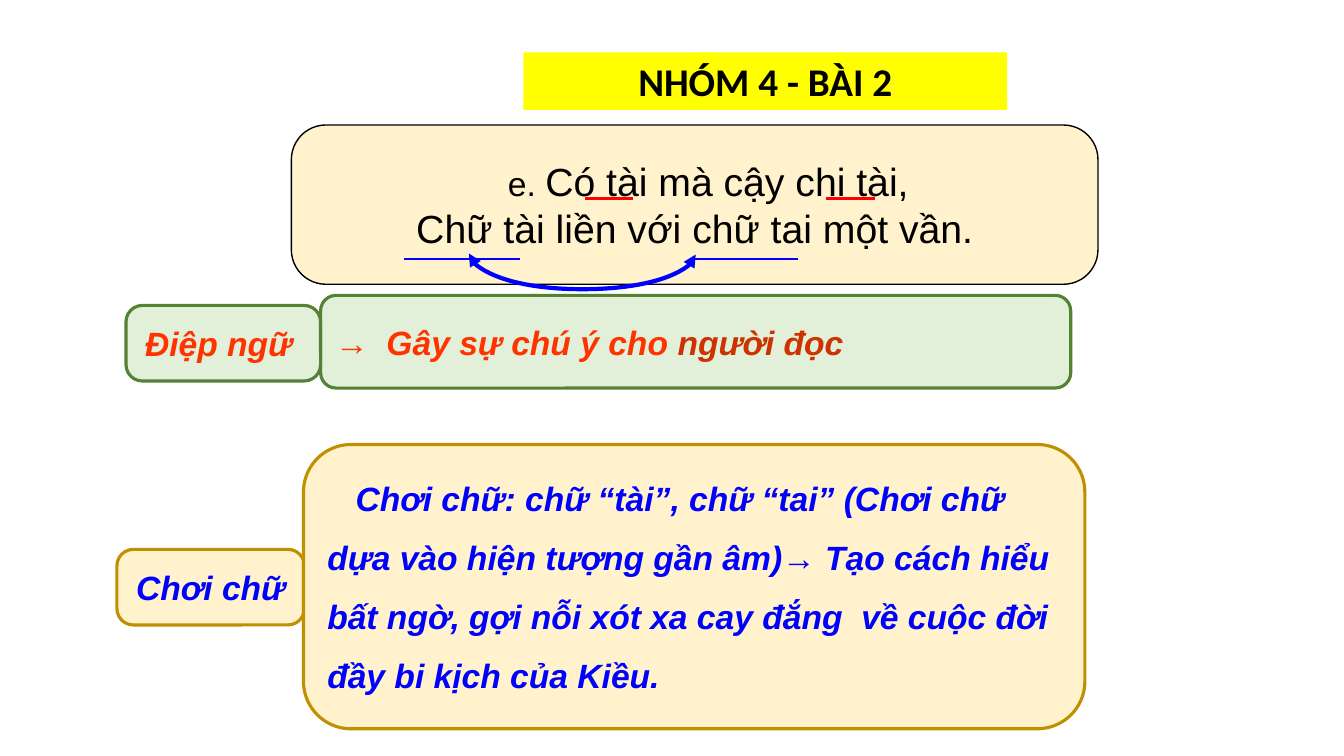
from lxml import etree
from pptx import Presentation
from pptx.dml.color import RGBColor
from pptx.enum.shapes import MSO_CONNECTOR, MSO_SHAPE
from pptx.enum.text import MSO_ANCHOR, PP_ALIGN
from pptx.oxml.ns import qn
from pptx.util import Inches, Pt

ROUND, RECT = MSO_SHAPE.ROUNDED_RECTANGLE, MSO_SHAPE.RECTANGLE
STRAIGHT, CURVE = MSO_CONNECTOR.STRAIGHT, MSO_CONNECTOR.CURVE
LEFT, CENTER = PP_ALIGN.LEFT, PP_ALIGN.CENTER
MIDDLE = MSO_ANCHOR.MIDDLE

COLORS = {
    "black": "000000", "blue": "0000FF", "red": "FF0000", "yellow": "FFFF00",
    "orange": "FF3300", "rust": "CC3300", "cream": "FFF2CC", "gold": "BF9000",
    "mint": "E2F0D9", "green": "548235",
}

# Text formats
TITLE = {"name": "Calibri", "size": Pt(28), "bold": True}
LABEL = {"name": "Arial", "size": Pt(24)}
VERSE = {"name": "Arial", "size": Pt(28)}
NOTE = {"name": "Arial", "size": Pt(24), "bold": True, "italic": True}

# Boxes: each paragraph is a list of (text, format, colour)
BOXES = [
    {"at": (2.89, 1.24, 8, 1.58), "round": 0.217, "fill": "cream", "line": ("black", 1),
     "align": CENTER, "indent": 0.27,
     "paras": [[("e. ", LABEL, "black"),
                ("Có tài mà cậy chi tài,\vChữ tài liền với chữ tai một vần.", VERSE, "black")]]},
    {"at": (1.16, 5.45, 1.86, 0.75), "round": 0.217, "fill": "cream", "line": ("gold", 2.25),
     "align": CENTER, "paras": [[("Chơi chữ", NOTE, "blue")]]},
    {"at": (3.18, 2.93, 7.44, 0.92), "round": 0.167, "fill": "mint", "line": ("green", 2.25),
     "align": LEFT, "tab": 0.51,
     "paras": [[("→\tGây sự chú ý cho ", NOTE, "orange"), ("người đọc", NOTE, "rust")]]},
    {"at": (1.25, 3.03, 1.93, 0.75), "round": 0.217, "fill": "mint", "line": ("green", 2.25),
     "align": CENTER, "right": 0.19, "paras": [[("Điệp ngữ", NOTE, "orange")]]},
    {"at": (3.01, 4.41, 7.75, 2.82), "round": 0.167, "fill": "cream", "line": ("gold", 2.25),
     "align": LEFT, "indent": 0.28,
     "paras": [[(line, NOTE, "blue")] for line in (
         "Chơi chữ: chữ “tài”, chữ “tai” (Chơi chữ",
         "dựa vào hiện tượng gần âm)→ Tạo cách hiểu",
         "bất ngờ, gợi nỗi xót xa cay đắng  về cuộc đời",
         "đầy bi kịch của Kiều.")]},
    {"at": (5.19, 0.52, 4.8, 0.57), "fill": "yellow", "align": CENTER,
     "paras": [[("NHÓM 4 - BÀI 2", TITLE, "black")]]},
]

# Underlines: left, right, height on the page, colour
UNDERLINES = [
    (4.01, 5.16, 2.57, "blue"), (6.86, 7.91, 2.57, "blue"),
    (5.8, 6.28, 1.97, "red"), (8.19, 8.68, 1.97, "red"),
]

# Arc between the two words: left, right, top, depth of its bend
ARC = (4.65, 6.9, 2.52, 0.36)
ARC_THICKNESS = 0.01


def rgb(name):
    return RGBColor.from_string(COLORS[name])


def add_box(page, box):
    kind = ROUND if "round" in box else RECT
    shape = page.shapes.add_shape(kind, *map(Inches, box["at"]))
    shape.shadow.inherit = False
    shape.fill.solid()
    shape.fill.fore_color.rgb = rgb(box["fill"])
    if "round" in box:
        shape.adjustments[0] = box["round"]
    if "line" in box:
        color, width = box["line"]
        shape.line.color.rgb = rgb(color)
        shape.line.width = Pt(width)
    else:
        shape.line.fill.background()

    frame = shape.text_frame
    frame.word_wrap = True
    frame.vertical_anchor = MIDDLE
    frame.margin_right = Inches(box.get("right", 0.1))
    for number, spans in enumerate(box["paras"]):
        para = frame.paragraphs[0] if number == 0 else frame.add_paragraph()
        para.alignment = box["align"]
        if number:
            para.space_before = Pt(13.3)
        props = para._p.get_or_add_pPr()
        if number == 0 and "indent" in box:
            props.set("indent", str(Inches(box["indent"])))
        if "tab" in box:
            tabs = etree.SubElement(props, qn("a:tabLst"))
            etree.SubElement(tabs, qn("a:tab"), pos=str(Inches(box["tab"])), algn="l")
        for text, style, color in spans:
            # A vertical tab in the text marks a line break
            for part, piece in enumerate(text.split("\v")):
                if part:
                    para.add_line_break()
                span = para.add_run()
                span.text = piece
                for key, value in style.items():
                    setattr(span.font, key, value)
                span.font.color.rgb = rgb(color)


def add_line(page, kind, ends, color, width):
    line = page.shapes.add_connector(kind, *map(Inches, ends))
    line.line.color.rgb = rgb(color)
    line.line.width = Pt(width)
    etree.SubElement(line._element.spPr, qn("a:effectLst"))
    return line


def add_arc(page):
    left, right, top, depth = ARC
    middle, half = (left + right) / 2, (right - left) / 2
    thin = ARC_THICKNESS / 2
    # Drawn upright, then turned a quarter so that it bends downwards
    ends = (middle + thin, top - half, middle - thin, top + half)
    arc = add_line(page, CURVE, ends, "blue", 3)
    props = arc._element.spPr
    props.find(qn("a:xfrm")).set("rot", str(270 * 60000))
    guides = props.find(qn("a:prstGeom")).get_or_add_avLst()
    bend = round(depth / ARC_THICKNESS * 100000)
    etree.SubElement(guides, qn("a:gd"), name="adj1", fmla=f"val {bend}")
    for end in ("a:headEnd", "a:tailEnd"):
        etree.SubElement(props.find(qn("a:ln")), qn(end), type="triangle")


def main():
    deck = Presentation()
    deck.slide_width, deck.slide_height = Inches(13.33), Inches(7.5)
    page = deck.slides.add_slide(deck.slide_layouts[6])
    for box in BOXES:
        add_box(page, box)
    add_arc(page)
    for left, right, height, color in UNDERLINES:
        add_line(page, STRAIGHT, (left, height, right, height), color, 2)
    deck.save("out.pptx")


if __name__ == "__main__":
    main()
